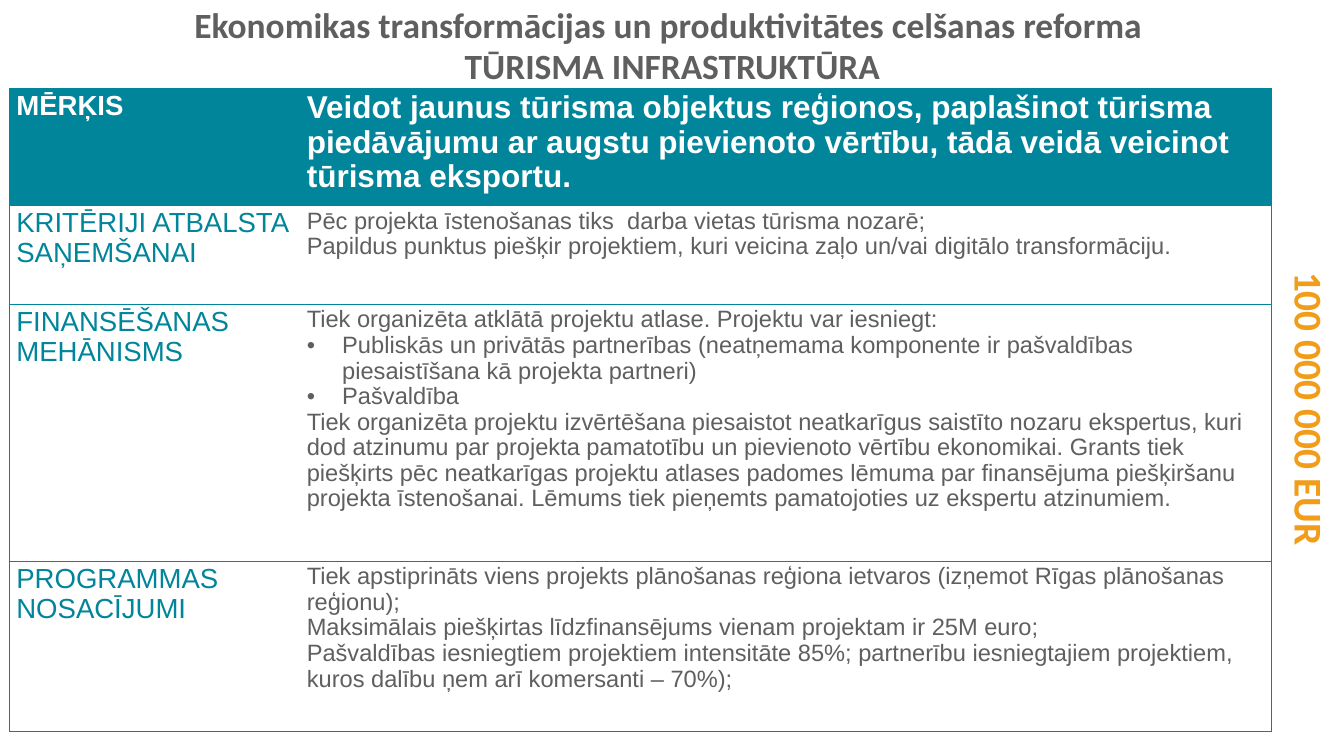
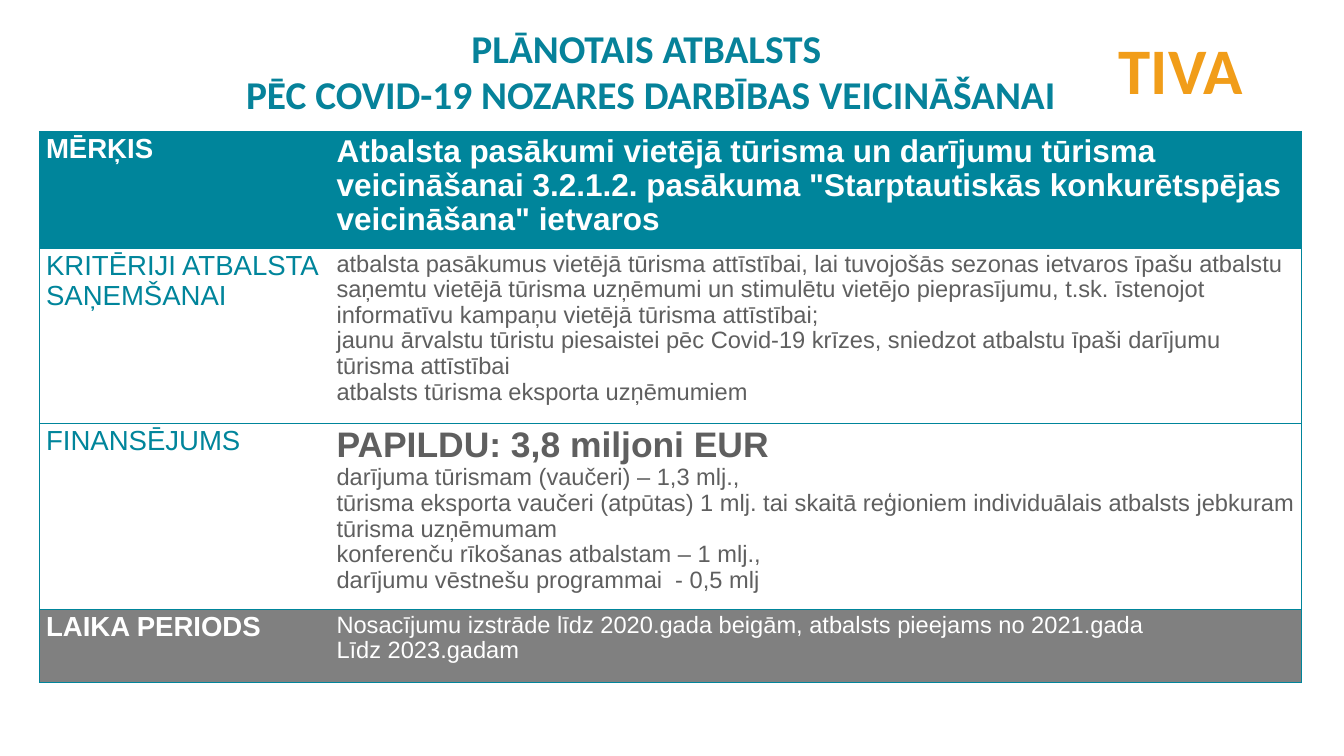
import pptx
import pptx.dml.color
import pptx.enum.text
import pptx.oxml
import pptx.oxml.ns
import pptx.util

Pt = pptx.util.Pt
CENTER = pptx.enum.text.PP_ALIGN.CENTER
LEFT = pptx.enum.text.PP_ALIGN.LEFT
MIDDLE = pptx.enum.text.MSO_ANCHOR.MIDDLE
TOP = pptx.enum.text.MSO_ANCHOR.TOP

# Shared look
TEAL, TITLE_TEAL, GREY, BAND = "00859B", "06829A", "5F5F5F", "808080"
ORANGE, WHITE = "F19D19", "FFFFFF"
LINE_SPACING = 0.97
COLUMNS = (295, 987)
INDENT = 36
HEAD_LABEL = {"name": "Arial", "size": Pt(28), "bold": True, "color": WHITE}
HEAD_TEXT = {**HEAD_LABEL, "size": Pt(32)}
LABEL = {**HEAD_LABEL, "bold": False, "color": TEAL}
BODY = {"name": "Arial", "size": Pt(24), "bold": False, "color": GREY}
BODY_WHITE = {**BODY, "color": WHITE}
AMOUNT = {**BODY, "size": Pt(36), "bold": True}
HEADING = {"name": "Calibri", "bold": True}


def rgb(color):
    return pptx.dml.color.RGBColor.from_string(color)


def add_run(p, text, style):
    r = p.add_run()
    r.text = text
    for name, value in style.items():
        if name == "color":
            r.font.color.rgb = rgb(value)
        else:
            setattr(r.font, name, value)


def add_bullet(p):
    pPr = p._p.get_or_add_pPr()
    pPr.set("marL", str(Pt(INDENT)))
    pPr.set("indent", str(-Pt(INDENT)))
    ns = pptx.oxml.ns.nsdecls("a")
    pPr.append(pptx.oxml.parse_xml(f'<a:buFont {ns} typeface="Arial"/>'))
    pPr.append(pptx.oxml.parse_xml(f'<a:buChar {ns} char="•"/>'))


def write_lines(tf, lines, align):
    """Each line is (text, style) or (text, style, True) for a bullet."""
    for i, (text, style, *bullet) in enumerate(lines):
        p = tf.paragraphs[0] if i == 0 else tf.add_paragraph()
        p.alignment = align
        p.line_spacing = LINE_SPACING
        if bullet:
            add_bullet(p)
        add_run(p, text, style)


def add_text(s, box, lines, size, color, anchor=TOP, rotation=0):
    sp = s.shapes.add_textbox(*map(Pt, box))
    sp.rotation = rotation
    tf = sp.text_frame
    tf.word_wrap = True
    tf.vertical_anchor = anchor
    style = {**HEADING, "size": Pt(size), "color": color}
    write_lines(tf, [(line, style) for line in lines], CENTER)


def set_borders(cell, first_column):
    """Teal on the outside and between rows, nothing between columns."""
    tcPr = cell._tc.get_or_add_tcPr()
    ns = pptx.oxml.ns.nsdecls("a")
    inner = "R" if first_column else "L"
    for i, side in enumerate("LRTB"):
        if side == inner:
            paint = "<a:noFill/>"
        else:
            paint = f'<a:solidFill><a:srgbClr val="{TEAL}"/></a:solidFill>'
        xml = f'<a:ln{side} {ns} w="{Pt(0.5)}">{paint}</a:ln{side}>'
        tcPr.insert(i, pptx.oxml.parse_xml(xml))


def add_program_table(s, left, top, rows):
    """Each row is (height, fill, label, label style, lines)."""
    height = sum(row[0] for row in rows)
    frame = s.shapes.add_table(len(rows), 2, Pt(left), Pt(top), Pt(sum(COLUMNS)), Pt(height))
    table = frame.table
    table.horz_banding = table.first_row = False
    for column, width in zip(table.columns, COLUMNS):
        column.width = Pt(width)
    for i, (height, fill, label, style, lines) in enumerate(rows):
        table.rows[i].height = Pt(height)
        for j, content in enumerate(([(label, style)], lines)):
            cell = table.cell(i, j)
            cell.fill.solid()
            cell.fill.fore_color.rgb = rgb(fill)
            set_borders(cell, j == 0)
            write_lines(cell.text_frame, content, LEFT)


def add_infrastructure_slide(prs):
    s = prs.slides.add_slide(prs.slide_layouts[6])
    add_text(s, (94, -27, 1178, 148),
             ["Ekonomikas transformācijas un produktivitātes celšanas reforma ",
              "TŪRISMA INFRASTRUKTŪRA"], 36, GREY, MIDDLE)
    add_program_table(s, 9.4, 89.3, [
        (114.5, TEAL, "MĒRĶIS", HEAD_LABEL, [
            ("Veidot jaunus tūrisma objektus reģionos, paplašinot tūrisma piedāvājumu ar "
             "augstu pievienoto vērtību, tādā veidā veicinot tūrisma eksportu.", HEAD_TEXT)]),
        (100.5, WHITE, "KRITĒRIJI ATBALSTA SAŅEMŠANAI", LABEL, [
            ("Pēc projekta īstenošanas tiks  darba vietas tūrisma nozarē;", BODY),
            ("Papildus punktus piešķir projektiem, kuri veicina zaļo un/vai digitālo "
             "transformāciju.", BODY)]),
        (261, WHITE, "FINANSĒŠANAS MEHĀNISMS", LABEL, [
            ("Tiek organizēta atklātā projektu atlase. Projektu var iesniegt:", BODY),
            ("Publiskās un privātās partnerības (neatņemama komponente ir pašvaldības "
             "piesaistīšana kā projekta partneri)", BODY, True),
            ("Pašvaldība", BODY, True),
            ("Tiek organizēta projektu izvērtēšana piesaistot neatkarīgus saistīto nozaru "
             "ekspertus, kuri dod atzinumu par projekta pamatotību un pievienoto vērtību "
             "ekonomikai. Grants tiek piešķirts pēc neatkarīgas projektu atlases padomes "
             "lēmuma par finansējuma piešķiršanu projekta īstenošanai. Lēmums tiek pieņemts "
             "pamatojoties uz ekspertu atzinumiem.", BODY)]),
        (173, WHITE, "PROGRAMMAS NOSACĪJUMI", LABEL, [
            ("Tiek apstiprināts viens projekts plānošanas reģiona ietvaros (izņemot Rīgas "
             "plānošanas reģionu);", BODY),
            ("Maksimālais piešķirtas līdzfinansējums vienam projektam ir 25M euro;", BODY),
            ("Pašvaldības iesniegtiem projektiem intensitāte 85%; partnerību iesniegtajiem "
             "projektiem, kuros dalību ņem arī komersanti – 70%);", BODY)]),
    ])
    add_text(s, (1122.5, 387.4, 411, 55.4), ["100 000 000 EUR"], 40, ORANGE, rotation=90)


def add_support_slide(prs):
    s = prs.slides.add_slide(prs.slide_layouts[6])
    add_text(s, (0, 0, 1322, 148),
             ["PLĀNOTAIS ATBALSTS ", "PĒC COVID-19 NOZARES DARBĪBAS VEICINĀŠANAI"],
             40, TITLE_TEAL, MIDDLE)
    add_program_table(s, 39.6, 133.2, [
        (114.5, TEAL, "MĒRĶIS", HEAD_LABEL, [
            ("Atbalsta pasākumi vietējā tūrisma un darījumu tūrisma veicināšanai 3.2.1.2. "
             'pasākuma "Starptautiskās konkurētspējas veicināšana" ietvaros', HEAD_TEXT)]),
        (178, WHITE, "KRITĒRIJI ATBALSTA SAŅEMŠANAI", LABEL, [
            ("atbalsta pasākumus vietējā tūrisma attīstībai, lai tuvojošās sezonas ietvaros "
             "īpašu atbalstu saņemtu vietējā tūrisma uzņēmumi un stimulētu vietējo "
             "pieprasījumu, t.sk. īstenojot informatīvu kampaņu vietējā tūrisma "
             "attīstībai;", BODY),
            ("jaunu ārvalstu tūristu piesaistei pēc Covid-19 krīzes, sniedzot atbalstu īpaši "
             "darījumu tūrisma attīstībai", BODY),
            ("atbalsts tūrisma eksporta uzņēmumiem", BODY)]),
        (181.5, WHITE, "FINANSĒJUMS", LABEL, [
            ("PAPILDU: 3,8 miljoni EUR", AMOUNT),
            ("darījuma tūrismam (vaučeri) – 1,3 mlj.,", BODY),
            ("tūrisma eksporta vaučeri (atpūtas) 1 mlj. tai skaitā reģioniem individuālais "
             "atbalsts jebkuram tūrisma uzņēmumam", BODY),
            ("konferenču rīkošanas atbalstam – 1 mlj.,", BODY),
            ("darījumu vēstnešu programmai  - 0,5 mlj", BODY)]),
        (74.5, BAND, "LAIKA PERIODS", HEAD_LABEL, [
            ("Nosacījumu izstrāde līdz 2020.gada beigām, atbalsts pieejams no 2021.gada",
             BODY_WHITE),
            ("Līdz 2023.gadam", BODY_WHITE)]),
    ])
    # Agency name, replaced by an invented one
    add_text(s, (993.6, 31, 411, 87), ["TIVA"], 66, ORANGE)


def main():
    prs = pptx.Presentation()
    prs.slide_width, prs.slide_height = Pt(1365), Pt(768)
    add_infrastructure_slide(prs)
    add_support_slide(prs)
    prs.save("out.pptx")


if __name__ == "__main__":
    main()
